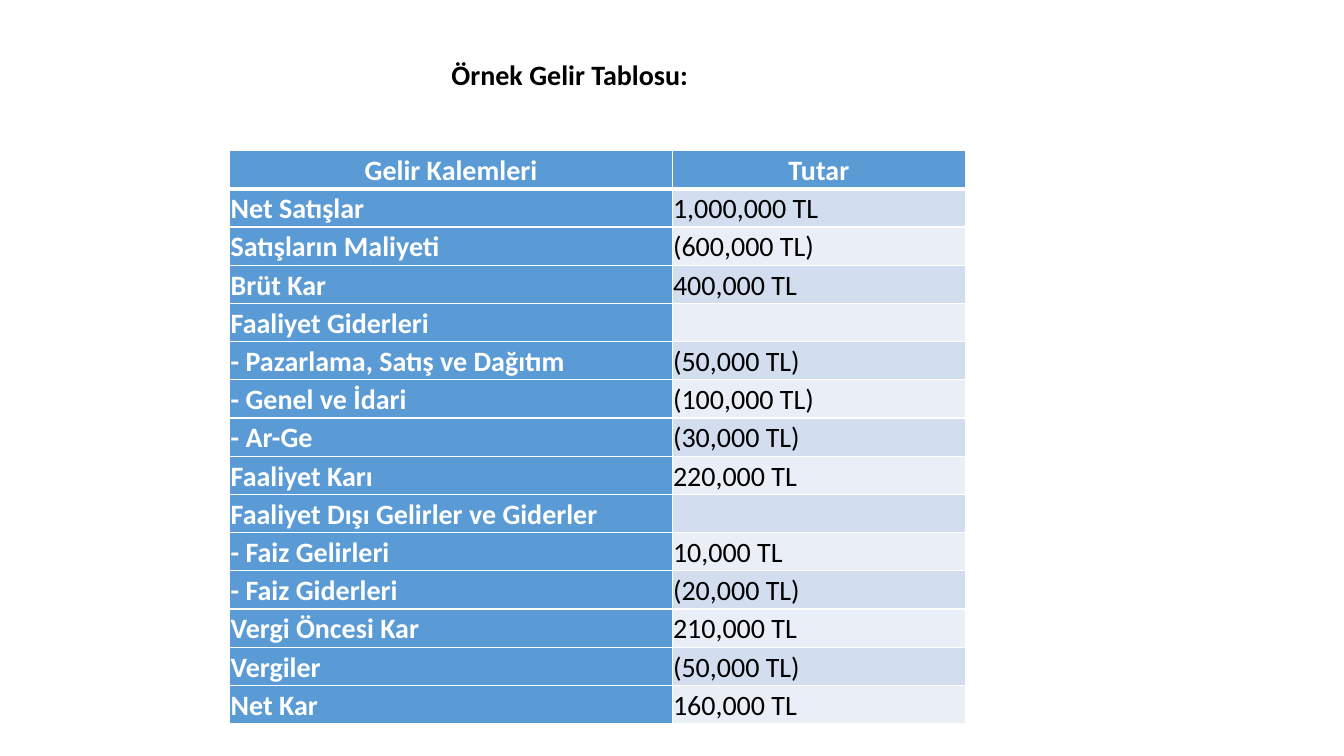
"""Build the sample income statement slide."""
import pptx
import pptx.dml.color
import pptx.enum.text
import pptx.oxml
import pptx.oxml.ns
import pptx.util

Pt = pptx.util.Pt
RGB = pptx.dml.color.RGBColor.from_string
ALIGN = pptx.enum.text.PP_ALIGN
ANCHOR = pptx.enum.text.MSO_ANCHOR

TITLE = "Örnek Gelir Tablosu:"
HEADER = ("Gelir Kalemleri", "Tutar")
INCOME_LINES = [
    ("Net Satışlar", "1,000,000 TL"),
    ("Satışların Maliyeti", "(600,000 TL)"),
    ("Brüt Kar", "400,000 TL"),
    ("Faaliyet Giderleri", ""),
    ("- Pazarlama, Satış ve Dağıtım", "(50,000 TL)"),
    ("- Genel ve İdari", "(100,000 TL)"),
    ("- Ar-Ge", "(30,000 TL)"),
    ("Faaliyet Karı", "220,000 TL"),
    ("Faaliyet Dışı Gelirler ve Giderler", ""),
    ("- Faiz Gelirleri", "10,000 TL"),
    ("- Faiz Giderleri", "(20,000 TL)"),
    ("Vergi Öncesi Kar", "210,000 TL"),
    ("Vergiler", "(50,000 TL)"),
    ("Net Kar", "160,000 TL"),
]
THEME = {
    "font": "Calibri", "size": 20, "ink": "000000", "white": "FFFFFF",
    "accent": "5B9BD5", "bands": ("D2DEEF", "EAEFF7"),
}
SLIDE_SIZE = (960, 540)
TITLE_BOX = (315.4, 37.4, 223.2, 31.5)
TABLE_LEFT, TABLE_TOP = 164.2, 107.5
COLUMN_WIDTHS = (316, 209.5)
ROW_HEIGHT = 27.17
CELL_INSET = 0.54
LINE_SPACING = 1.07
RULE, HEADER_RULE = 1, 3


def write(frame, text, color=THEME["ink"], bold=False, align=ALIGN.LEFT, spacing=None):
    paragraph = frame.paragraphs[0]
    paragraph.alignment = align
    paragraph.line_spacing = spacing
    paragraph.font.size = Pt(THEME["size"])
    if text:
        run = paragraph.add_run()
        run.text = text
        run.font.name = THEME["font"]
        run.font.size = Pt(THEME["size"])
        run.font.bold = bold
        run.font.color.rgb = RGB(color)


def rule_cell(cell, widths):
    properties = cell._tc.get_or_add_tcPr()
    for position, (side, width) in enumerate(widths.items()):
        properties.insert(position, pptx.oxml.parse_xml(
            f'<a:ln{side} {pptx.oxml.ns.nsdecls("a")} w="{Pt(width)}"><a:solidFill>'
            f'<a:srgbClr val="{THEME["white"]}"/></a:solidFill></a:ln{side}>'))


def add_income_table(slide):
    lines = [HEADER, *INCOME_LINES]
    income = slide.shapes.add_table(
        len(lines), len(HEADER), Pt(TABLE_LEFT), Pt(TABLE_TOP),
        Pt(sum(COLUMN_WIDTHS)), Pt(ROW_HEIGHT * len(lines))).table
    for column, width in zip(income.columns, COLUMN_WIDTHS):
        column.width = Pt(width)
    for row, line in enumerate(lines):
        income.rows[row].height = Pt(ROW_HEIGHT)
        for column, text in enumerate(line):
            cell = income.cell(row, column)
            is_header = row == 0
            is_label = is_header or column == 0
            cell.margin_left = cell.margin_right = Pt(CELL_INSET)
            cell.margin_top = cell.margin_bottom = Pt(CELL_INSET)
            cell.vertical_anchor = ANCHOR.MIDDLE
            cell.fill.solid()
            cell.fill.fore_color.rgb = RGB(
                THEME["accent"] if is_label else THEME["bands"][(row - 1) % 2])
            write(cell.text_frame, text, bold=is_label, spacing=LINE_SPACING,
                  color=THEME["white"] if is_label else THEME["ink"],
                  align=ALIGN.CENTER if is_header else ALIGN.LEFT)
            rule_cell(cell, {"L": RULE, "R": RULE,
                             "T": HEADER_RULE if row == 1 else RULE,
                             "B": HEADER_RULE if is_header else RULE})


def main():
    deck = pptx.Presentation()
    deck.slide_width, deck.slide_height = map(Pt, SLIDE_SIZE)
    slide = deck.slides.add_slide(deck.slide_layouts[6])
    add_income_table(slide)
    title = slide.shapes.add_textbox(*map(Pt, TITLE_BOX)).text_frame
    title.word_wrap = True
    title.auto_size = pptx.enum.text.MSO_AUTO_SIZE.SHAPE_TO_FIT_TEXT
    write(title, TITLE, bold=True)
    deck.save("out.pptx")


if __name__ == "__main__":
    main()
